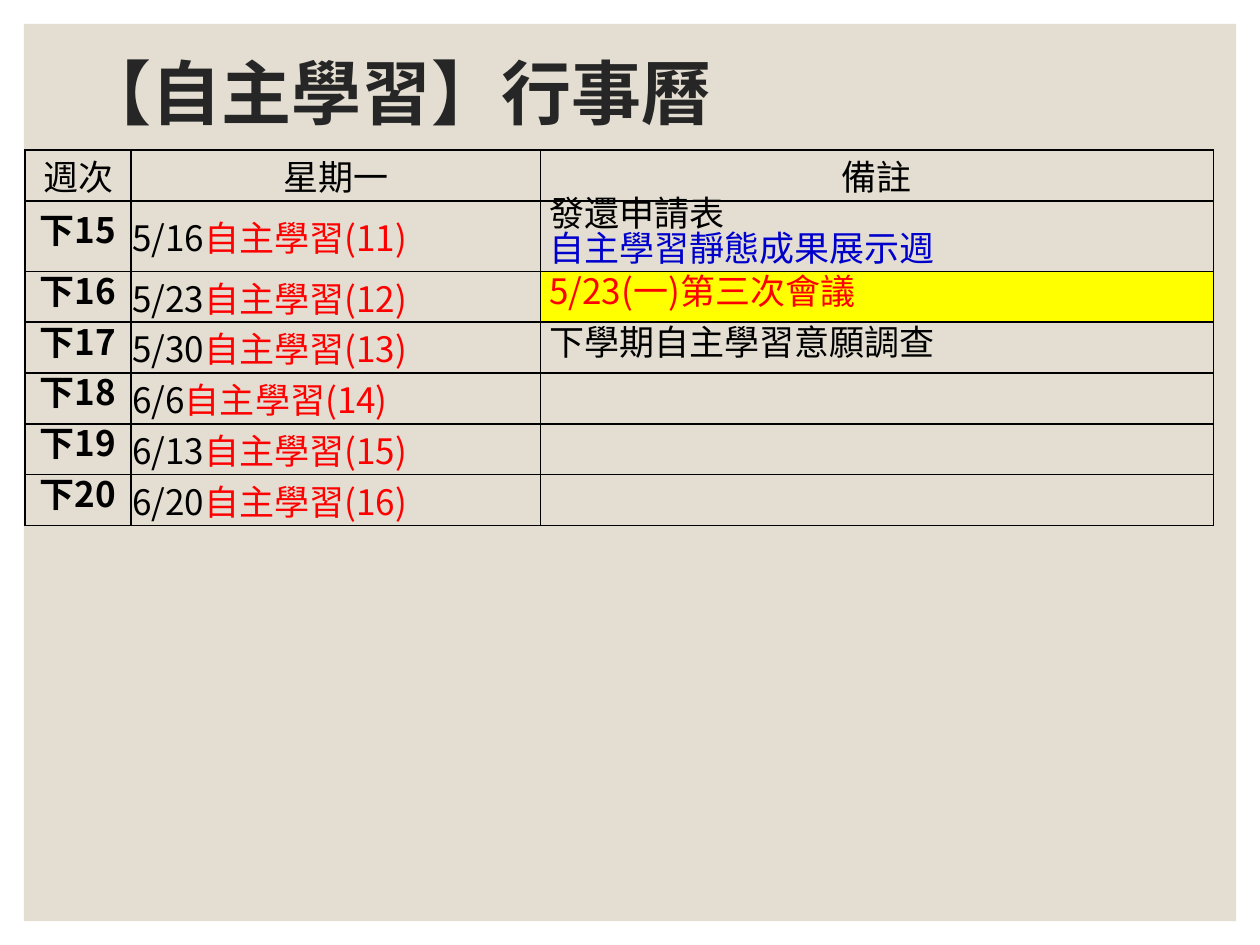
from lxml import etree
from pptx import Presentation
from pptx import util as u
from pptx.dml.color import RGBColor
from pptx.enum import shapes, text
from pptx.oxml.ns import qn

BLACK = RGBColor(0x00, 0x00, 0x00)
RED = RGBColor(0xFF, 0x00, 0x00)
BLUE = RGBColor(0x00, 0x00, 0xCC)
YELLOW = RGBColor(0xFF, 0xFF, 0x00)
BEIGE = RGBColor(0xE3, 0xDE, 0xD1)
CHARCOAL = RGBColor(0x26, 0x26, 0x26)

TABLE_FONT = "Noto Sans CJK SC"
HEADERS = ["週次", "星期一", "備註"]
DATES = ["5/16", "5/23", "5/30", "6/6", "6/13", "6/20"]
FIRST_WEEK, FIRST_SESSION = 15, 11
NOTES = {
    15: [("發還申請表", BLACK), ("自主學習靜態成果展示週", BLUE)],
    16: [("5/23(一)第三次會議", RED)],
    17: [("下學期自主學習意願調查", BLACK)],
}
HIGHLIGHTED_WEEK = 16
COLUMN_WIDTHS = [0.84, 3.25, 5.34]
ROW_HEIGHT, TALL_ROW_HEIGHT = 0.4, 0.56
NOTE_INDENT = 0.07


def set_all(target, values):
    for name, value in values.items():
        setattr(target, name, value)


class CalendarSlide:
    title_style = {"name": "League Spartan", "size": u.Pt(40), "bold": True}
    cell_style = {"name": TABLE_FONT, "size": u.Pt(20), "bold": False}
    cell_layout = {
        "margin_left": u.Inches(0.01), "margin_right": u.Inches(0.01),
        "margin_top": 0, "margin_bottom": 0,
        "vertical_anchor": text.MSO_ANCHOR.MIDDLE,
    }
    centered = {"alignment": text.PP_ALIGN.CENTER}
    tight = {"line_spacing": u.Pt(20)}

    def __init__(self, presentation):
        self.slide = presentation.slides.add_slide(presentation.slide_layouts[5])

    def panel(self, left, top, width, height, color):
        panel = self.slide.shapes.add_shape(
            shapes.MSO_SHAPE.RECTANGLE,
            *map(u.Inches, (left, top, width, height)))
        panel.shadow.inherit = False
        panel.fill.solid()
        panel.fill.fore_color.rgb = color
        panel.line.fill.background()
        self.slide.shapes._spTree.insert(2, panel._element)  # behind the title

    def run(self, paragraph, words, color, style):
        run = paragraph.add_run()
        run.text = words
        set_all(run.font, style)
        run.font.color.rgb = color
        east_asian = etree.SubElement(run._r.get_or_add_rPr(), qn("a:ea"))
        east_asian.set("typeface", TABLE_FONT)

    def title(self, words, left, top, width, height):
        title = self.slide.shapes.title
        set_all(title, {"left": u.Inches(left), "top": u.Inches(top),
                        "width": u.Inches(width), "height": u.Inches(height)})
        title.text_frame.vertical_anchor = text.MSO_ANCHOR.MIDDLE
        paragraph = title.text_frame.paragraphs[0]
        set_all(paragraph, {"alignment": text.PP_ALIGN.LEFT, "line_spacing": 0.9})
        self.run(paragraph, words, CHARCOAL, self.title_style)

    def table(self, left, top, column_widths, row_heights):
        frame = self.slide.shapes.add_table(
            len(row_heights), len(column_widths), u.Inches(left), u.Inches(top),
            u.Inches(sum(column_widths)), u.Inches(sum(row_heights)))
        table = frame.table
        set_all(table, {"first_row": False, "horz_banding": False})
        for column, width in zip(table.columns, column_widths):
            column.width = u.Inches(width)
        for row, height in zip(table.rows, row_heights):
            row.height = u.Inches(height)
        for cell in table.iter_cells():
            set_all(cell, self.cell_layout)
            self.borders(cell)
            cell.fill.background()
            cell.text_frame.paragraphs[0].font.size = self.cell_style["size"]
        return table

    def borders(self, cell):
        properties = cell._tc.get_or_add_tcPr()
        for side in ("a:lnL", "a:lnR", "a:lnT", "a:lnB"):
            line = etree.SubElement(properties, qn(side), w=str(u.Pt(1)))
            fill = etree.SubElement(line, qn("a:solidFill"))
            etree.SubElement(fill, qn("a:srgbClr"), val=str(BLACK))

    def cell_text(self, cell, lines, layout, **font):
        """Write lines, each a list of (words, color) runs."""
        frame = cell.text_frame
        for index, runs in enumerate(lines):
            paragraph = frame.add_paragraph() if index else frame.paragraphs[0]
            set_all(paragraph, layout)
            for words, color in runs:
                self.run(paragraph, words, color, {**self.cell_style, **font})


def main():
    presentation = Presentation()
    set_all(presentation, {"slide_width": u.Inches(10),
                           "slide_height": u.Inches(7.5)})
    page = CalendarSlide(presentation)
    page.panel(0.19, 0.19, 9.62, 7.12, BEIGE)
    page.title("【自主學習】行事曆", 0.55, 0, 7.72, 1.53)

    row_heights = [ROW_HEIGHT, TALL_ROW_HEIGHT] + [ROW_HEIGHT] * (len(DATES) - 1)
    calendar = page.table(0.2, 1.19, COLUMN_WIDTHS, row_heights)
    for column, header in enumerate(HEADERS):
        page.cell_text(calendar.cell(0, column), [[(header, BLACK)]], page.centered)

    for index, date in enumerate(DATES):
        week = FIRST_WEEK + index
        week_cell, date_cell, note_cell = calendar.rows[index + 1].cells
        page.cell_text(week_cell, [[(f"下{week}", BLACK)]],
                       {**page.centered, **page.tight}, bold=True)
        session = f"自主學習({FIRST_SESSION + index})"
        page.cell_text(date_cell, [[(date, BLACK), (session, RED)]], {})
        if week in NOTES:
            note_cell.margin_left = u.Inches(NOTE_INDENT)
            page.cell_text(note_cell, [[note] for note in NOTES[week]],
                           {"alignment": text.PP_ALIGN.JUSTIFY, **page.tight})
        if week == HIGHLIGHTED_WEEK:
            note_cell.fill.solid()
            note_cell.fill.fore_color.rgb = YELLOW

    presentation.save("out.pptx")


if __name__ == "__main__":
    main()
